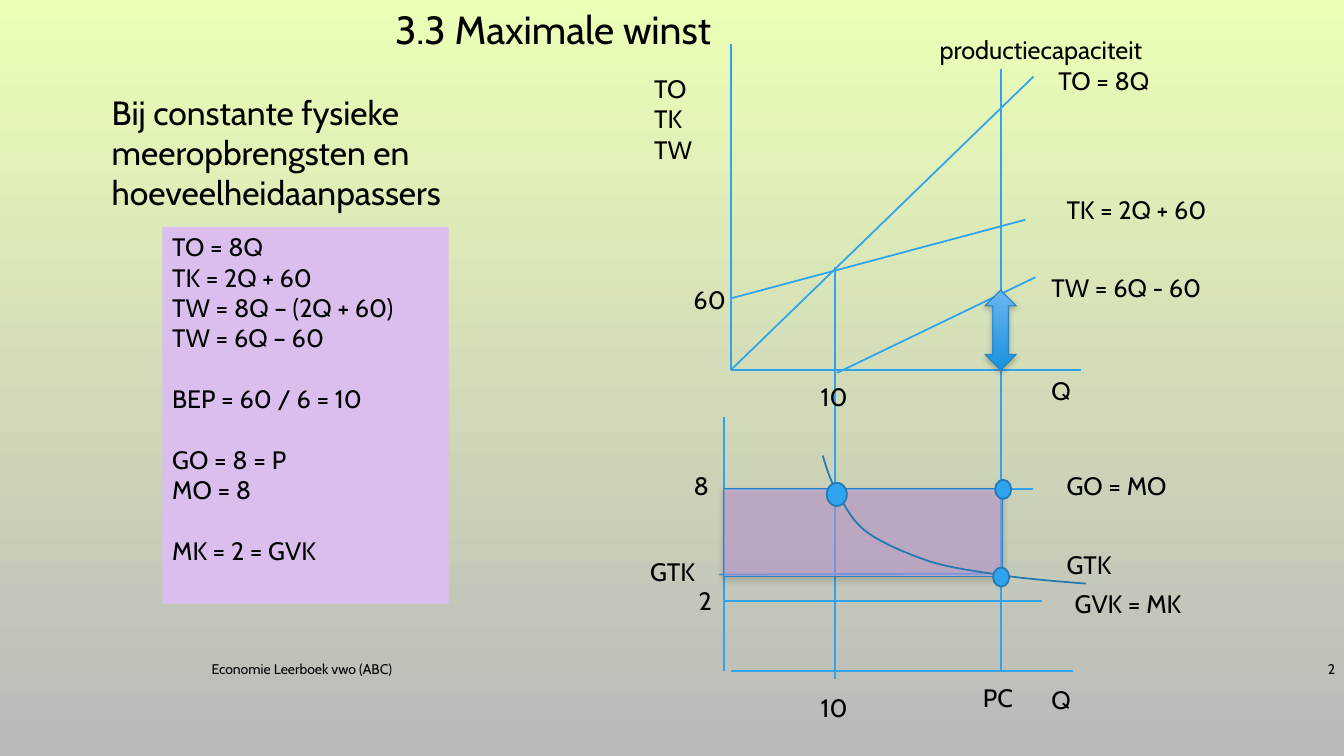
from dataclasses import dataclass

from lxml import etree
from pptx import Presentation
from pptx.dml.color import RGBColor
from pptx.enum.shapes import MSO_CONNECTOR, MSO_SHAPE
from pptx.enum.text import MSO_ANCHOR, MSO_AUTO_SIZE, PP_ALIGN
from pptx.oxml.ns import qn
from pptx.util import Inches, Pt

STRAIGHT = MSO_CONNECTOR.STRAIGHT
RECTANGLE, OVAL = MSO_SHAPE.RECTANGLE, MSO_SHAPE.OVAL
DOUBLE_ARROW = MSO_SHAPE.UP_DOWN_ARROW
TOP, MIDDLE = MSO_ANCHOR.TOP, MSO_ANCHOR.MIDDLE
LEFT, RIGHT = PP_ALIGN.LEFT, PP_ALIGN.RIGHT
GROW = MSO_AUTO_SIZE.SHAPE_TO_FIT_TEXT

CELL = 0.1  # grid pitch in inches
LABEL_ROWS = 4


@dataclass(frozen=True)
class Theme:
    font: str = "Cabin"
    title: int = 28
    lead: int = 24
    body: int = 18
    footer: int = 10
    gap: int = 22
    line: float = 1.25
    thin: float = 0.75
    ink: str = "000000"
    sky: str = "EBFFB7"
    ground: str = "B9B9B9"
    formulas: str = "DABEED"
    profit: str = "C89EE3"
    axis: str = "2FA3EE"
    curve: str = "2379B0"
    edge: str = "2683BF"
    arrow_top: str = "6CB6F1"
    arrow_bottom: str = "1891DF"


THEME = Theme()


@dataclass(frozen=True)
class Region:
    """Part of the slide whose grid starts at (col, row)."""
    slide: object
    col: float = 0
    row: float = 0

    def point(self, col, row):
        return Inches((self.col + col) * CELL), Inches((self.row + row) * CELL)

    def box(self, col, row, cols, rows):
        return (*self.point(col, row), Inches(cols * CELL), Inches(rows * CELL))


def rgb(value):
    return RGBColor.from_string(value)


def fill_gradient(fill, first, last):
    fill.gradient()
    fill.gradient_angle = 270
    for stop, colour in zip(fill.gradient_stops, (first, last)):
        stop.color.rgb = rgb(colour)


def add_shadow(shape):
    effects = shape._element.spPr.find(qn("a:effectLst"))
    shadow = etree.SubElement(effects, qn("a:outerShdw"), blurRad=str(Pt(4)),
                              dist=str(Pt(2)), dir="5400000", rotWithShape="0")
    black = etree.SubElement(shadow, qn("a:srgbClr"), val=THEME.ink)
    etree.SubElement(black, qn("a:alpha"), val="28000")


def write(frame, groups, size, align=LEFT, anchor=TOP):
    """Groups of lines; each group after the first is set off by a gap."""
    frame.word_wrap = True
    frame.vertical_anchor = anchor
    paragraph = frame.paragraphs[0]
    for g, lines in enumerate(groups):
        for i, line in enumerate(lines):
            if g or i:
                paragraph = frame.add_paragraph()
            if g and not i:
                paragraph.space_before = Pt(THEME.gap)
            paragraph.alignment = align
            run = paragraph.add_run()
            run.text = line
            run.font.name, run.font.size = THEME.font, Pt(size)
            run.font.color.rgb = rgb(THEME.ink)


def add_text(region, text, col, row, cols, rows=LABEL_ROWS, size=THEME.body,
             align=LEFT, anchor=TOP):
    label = region.slide.shapes.add_textbox(*region.box(col, row, cols, rows))
    write(label.text_frame, [text.split("\n")], size, align, anchor)
    if anchor == TOP:
        label.text_frame.auto_size = GROW


def add_line(region, start, end):
    line = region.slide.shapes.add_connector(
        STRAIGHT, *region.point(*start), *region.point(*end))
    line.line.color.rgb, line.line.width = rgb(THEME.axis), Pt(THEME.line)
    etree.SubElement(line._element.spPr, qn("a:effectLst"))


def add_block(region, kind, box, fill=None, edge=None, width=THEME.line):
    block = region.slide.shapes.add_shape(kind, *region.box(*box))
    block.shadow.inherit = False
    if fill:
        block.fill.solid()
        block.fill.fore_color.rgb = rgb(fill)
    if edge:
        block.line.color.rgb, block.line.width = rgb(edge), Pt(width)
    else:
        block.line.fill.background()
    return block


def add_curve(region, start, segments, steps=12):
    """Cubic segments, drawn as a fine polyline."""
    points = [start]
    for a, b, end in segments:
        begin = points[-1]
        for step in range(1, steps + 1):
            t = step / steps
            weights = (1 - t) ** 3, 3 * t * (1 - t) ** 2, 3 * t * t * (1 - t), t ** 3
            points.append(tuple(sum(w * p[axis] for w, p in zip(weights, (begin, a, b, end)))
                                for axis in (0, 1)))
    outline = [region.point(*p) for p in points]
    builder = region.slide.shapes.build_freeform(*outline[0])
    builder.add_line_segments(outline[1:], close=False)
    curve = builder.convert_to_shape()
    curve.shadow.inherit = False
    curve.fill.background()
    curve.line.color.rgb, curve.line.width = rgb(THEME.curve), Pt(THEME.line)


def draw_explanation(page):
    add_text(page, "3.3 Maximale winst", 38.2, 0, 40.7, 5.7, THEME.title)
    add_text(page, "Bij constante fysieke meeropbrengsten en hoeveelheidaanpassers",
             10.1, 8.6, 53, 9.1, THEME.lead)
    formulas = add_block(page, RECTANGLE, (16.1, 22.5, 28.4, 37.4), THEME.formulas)
    write(formulas.text_frame, [
        ["TO = 8Q", "TK = 2Q + 60", "TW = 8Q – (2Q + 60)", "TW = 6Q – 60"],
        ["BEP = 60 / 6 = 10"], ["GO = 8 = P", "MO = 8"], ["MK = 2 = GVK"]], THEME.body)


def draw_footer(page):
    add_text(page, "Economie Leerboek vwo (ABC)", 20, 64.4, 73, size=THEME.footer, anchor=MIDDLE)
    add_text(page, "2", 125, 64.4, 8.4, size=THEME.footer, align=RIGHT, anchor=MIDDLE)


def draw_guides(page):
    # Break-even quantity and production capacity run through both charts
    for col, top, bottom in ((82.8, 26.5, 67.4), (99.3, 6.8, 66.6)):
        add_line(page, (col, top), (col, bottom))


def draw_totals(chart):
    # Axes, then TO, TK and TW
    for start, end in (((0, 0), (0, 32.3)), ((0, 32.3), (34.7, 32.3)),
                       ((30, 3.2), (0, 32.3)), ((29.2, 17.4), (0, 25.2)),
                       ((30.2, 23.1), (10.5, 32.6))):
        add_line(chart, start, end)
    for label in (("TO\nTK\nTW", -8.6, 2.4, 6.3, 10.1), ("Q", 30.8, 32.3, 4.7),
                  ("10", 7.9, 32.9, 7.9), ("60", -4.7, 23.3, 6.3),
                  ("TO = 8Q", 31.5, 1.6, 13.4), ("TK = 2Q + 60", 32.3, 14.4, 20.1),
                  ("TW = 6Q - 60", 30.8, 22.1, 19.6),
                  ("productiecapaciteit", 19.7, -1.5, 26.8)):
        add_text(chart, *label)
    # Total profit at full capacity
    profit = add_block(chart, DOUBLE_ARROW, (25.2, 24.4, 3.1, 7.9),
                       edge=THEME.edge, width=THEME.thin)
    fill_gradient(profit.fill, THEME.arrow_top, THEME.arrow_bottom)
    add_shadow(profit)


def draw_averages(chart):
    # Axes, then GVK, GO and GTK levels
    for start, end in (((0, 0), (0, 25.2)), ((0.7, 25.2), (34.6, 25.2)),
                       ((31.5, 18.2), (0, 18.2)), ((30.7, 7.1), (0, 7.1)),
                       ((27.1, 15.5), (-0.5, 15.6))):
        add_line(chart, start, end)
    for label in (("Q", 31.5, 26, 3.9), ("10", 8.6, 26.8, 7.1), ("PC", 24.7, 25.8, 8.4),
                  ("8", -4, 4.8, 3.1), ("2", -3.5, 16.2, 3.1), ("GTK", -8.3, 13.3, 7.4),
                  ("GVK = MK", 33.8, 16.5, 15.4), ("GO = MO", 33, 4.8, 13.4),
                  ("GTK", 33, 12.6, 10.2)):
        add_text(chart, *label)
    # Profit area
    profit = add_block(chart, RECTANGLE, (0, 7.1, 27.6, 8.7), THEME.profit,
                       THEME.edge, THEME.thin)
    colour = profit.fill._xPr.find(qn("a:solidFill"))[0]
    etree.SubElement(colour, qn("a:alpha"), val="50000")
    add_shadow(profit)
    # Average total cost with its marked points
    add_curve(chart, (9.8, 3.8), (
        ((10.2, 5.1), (10.6, 6.4), (11.3, 7.6)), ((12.1, 8.9), (12.7, 10.3), (14.2, 11.4)),
        ((15.7, 12.5), (18.1, 13.5), (20.4, 14.3)), ((22.7, 15), (25.2, 15.3), (27.8, 15.7)),
        ((30.4, 16.1), (35.9, 16.5), (35.9, 16.5))))
    for dot in ((10.2, 6.5, 2, 2.3), (26.7, 14.9, 1.6, 1.9), (26.9, 6.2, 1.6, 1.9)):
        add_block(chart, OVAL, dot, THEME.axis, THEME.curve)


def main():
    deck = Presentation()
    deck.slide_width, deck.slide_height = Inches(13.33), Inches(7.5)
    slide = deck.slides.add_slide(deck.slide_layouts[6])
    fill_gradient(slide.background.fill, THEME.sky, THEME.ground)
    page = Region(slide)
    draw_footer(page)
    draw_explanation(page)
    draw_guides(page)
    draw_totals(Region(slide, 72.5, 4.4))
    draw_averages(Region(slide, 71.8, 41.4))
    deck.save("out.pptx")


if __name__ == "__main__":
    main()
